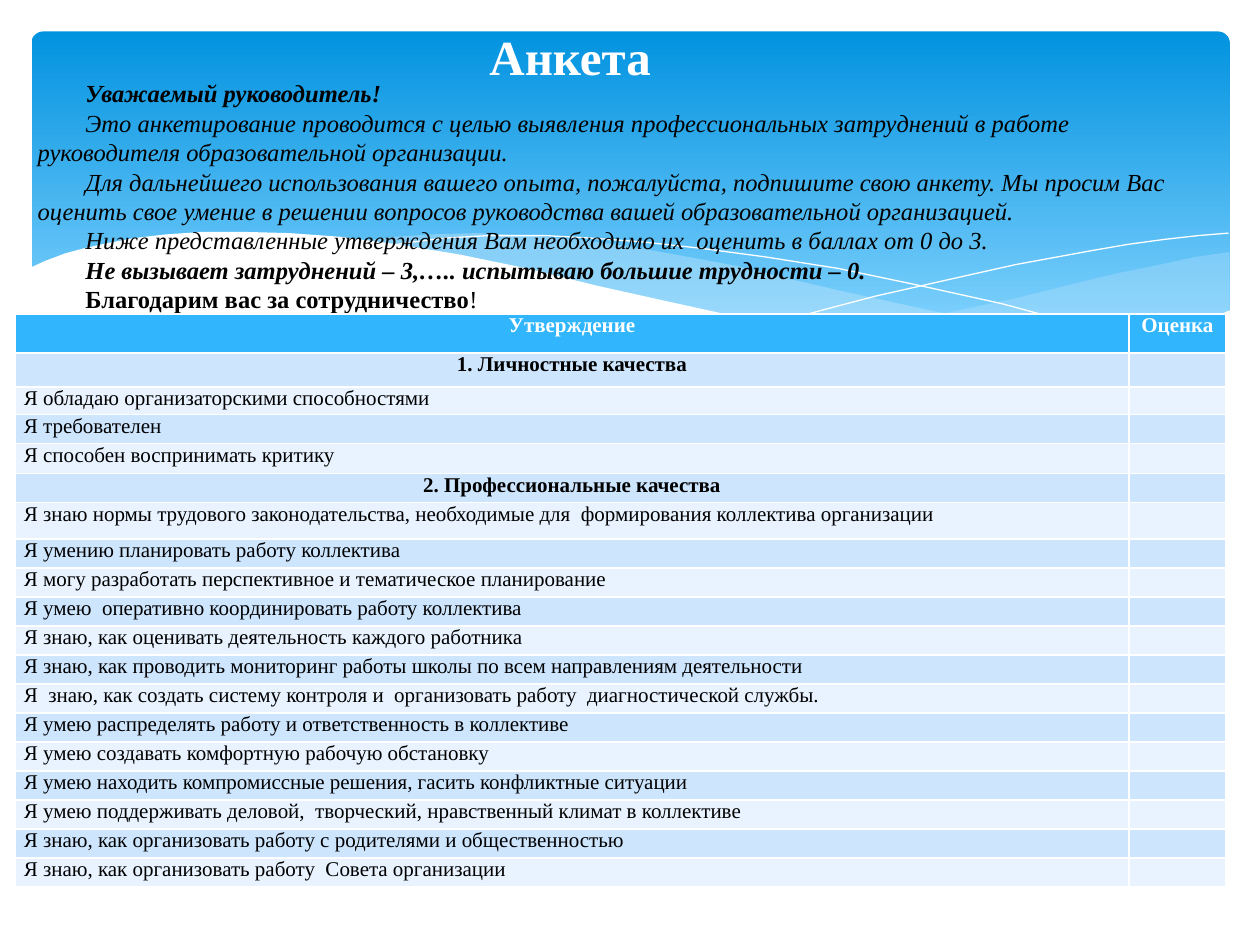
from dataclasses import dataclass

from lxml import etree
from pptx import Presentation
from pptx import util as u
from pptx.dml.color import RGBColor
from pptx.enum import shapes, text
from pptx.oxml.ns import qn

FONT = "Times New Roman"
WHITE, BLACK = "FFFFFF", "000000"
HEADER_BLUE, BAND_DARK, BAND_LIGHT = "31B6FD", "CEE5FE", "E8F3FF"
MIST = "C6E7FC"


@dataclass
class Wave:
    points: list[tuple[float, float]]
    fill: str | None = None
    alpha: int = 100  # opacity, percent


@dataclass
class IntroLine:
    runs: list[str]
    bold: bool = False
    italic: bool = True


WAVES = [
    Wave([(9.76, 2), (9.48, 2.04), (9.21, 2.1), (8.91, 2.16), (8.61, 2.23), (8.05, 2.37),
          (7.53, 2.48), (7.06, 2.57), (6.61, 2.65), (6.91, 2.69), (7.19, 2.72), (7.45, 2.75),
          (7.81, 2.77), (8.14, 2.78), (8.54, 2.76), (8.89, 2.72), (9.21, 2.65), (9.49, 2.57),
          (9.76, 2.47)], MIST, 29),
    Wave([(8.93, 2.73), (8.66, 2.69), (8.07, 2.6), (7.41, 2.47), (6.68, 2.31), (6.29, 2.22),
          (5.84, 2.11), (5.41, 2.03), (5.02, 1.96), (4.65, 1.91), (4.2, 1.87), (3.8, 1.85),
          (3.44, 1.86), (3.13, 1.88), (2.86, 1.91), (3.23, 1.96), (3.62, 2.03), (4.04, 2.11),
          (4.49, 2.22), (4.91, 2.32), (5.3, 2.4), (5.66, 2.48), (6.01, 2.55), (6.5, 2.64),
          (6.95, 2.7), (7.36, 2.75), (7.73, 2.77), (8.07, 2.78), (8.38, 2.78), (8.67, 2.76)],
         MIST, 40),
    Wave([(3.09, 1.95), (3.28, 1.92), (3.53, 1.89), (3.87, 1.87), (4.33, 1.87), (4.69, 1.89),
          (5.1, 1.92), (5.56, 1.97), (6.08, 2.04), (6.65, 2.13), (7.27, 2.26), (7.95, 2.41),
          (8.69, 2.61), (9.07, 2.72)]),
    Wave([(6.13, 2.57), (6.53, 2.46), (6.95, 2.35), (7.48, 2.23), (8.06, 2.1), (8.66, 1.99),
          (8.95, 1.94), (9.24, 1.9), (9.51, 1.87), (9.75, 1.85)]),
    Wave([(9.77, 2.46), (9.59, 2.53), (9.4, 2.59), (9.2, 2.65), (8.99, 2.69), (8.75, 2.73),
          (8.5, 2.75), (8.09, 2.77), (7.78, 2.76), (7.44, 2.74), (7.08, 2.7), (6.68, 2.65),
          (6.26, 2.58), (5.79, 2.5), (5.29, 2.39), (4.75, 2.27), (4.18, 2.13), (3.65, 2.02),
          (3.16, 1.94), (2.71, 1.88), (2.3, 1.85), (1.93, 1.84), (1.61, 1.84), (1.32, 1.86),
          (1.06, 1.89), (0.85, 1.93), (0.67, 1.97), (0.52, 2.01), (0.36, 2.07), (0.23, 2.13),
          (0.23, 3.29), (9.77, 3.29)], WHITE),
]

INTRO = [
    IntroLine(["Уважаемый руководитель!"], bold=True),
    IntroLine(["Это анкетирование проводится с целью выявления профессиональных затруднений "
               "в работе руководителя образовательной организации."]),
    IntroLine(["Для дальнейшего использования вашего опыта, пожалуйста, подпишите свою анкету. "
               "Мы просим Вас оценить свое умение в решении вопросов руководства вашей "
               "образовательной организацией."]),
    IntroLine(["Ниже представленные утверждения Вам необходимо их  оценить в баллах от 0 до 3."]),
    IntroLine(["Не вызывает затруднений – 3,….. испытываю большие трудности – 0."], bold=True),
    IntroLine(["Благодарим вас за сотрудничество", "!"], bold=True, italic=False),
]

HEADER = ("Утверждение", "Оценка")
SECTIONS = {
    "1. Личностные качества": [
        "Я обладаю организаторскими способностями",
        "Я требователен",
        "Я способен воспринимать критику",
    ],
    "2. Профессиональные качества": [
        "Я знаю нормы трудового законодательства, необходимые для  формирования коллектива организации",
        "Я умению планировать работу коллектива",
        "Я могу разработать перспективное и тематическое планирование",
        "Я умею  оперативно координировать работу коллектива",
        "Я знаю, как оценивать деятельность каждого работника",
        "Я знаю, как проводить мониторинг работы школы по всем направлениям деятельности",
        "Я  знаю, как создать систему контроля и  организовать работу  диагностической службы.",
        "Я умею распределять работу и ответственность в коллективе",
        "Я умею создавать комфортную рабочую обстановку",
        "Я умею находить компромиссные решения, гасить конфликтные ситуации",
        "Я умею поддерживать деловой,  творческий, нравственный климат в коллективе",
        "Я знаю, как организовать работу с родителями и общественностью",
        "Я знаю, как организовать работу  Совета организации",
    ],
}
COLUMN_WIDTHS = (8.84, 0.77)
ROW_HEIGHT = 0.23
SPECIAL_HEIGHTS = {0: 0.31, 1: 0.27, 2: 0.22, 4: 0.24, 6: 0.29}


def rgb(value: str) -> RGBColor:
    return RGBColor.from_string(value)


def set_font(font, size: float, color: str, bold: bool = False, italic: bool = False) -> None:
    font.name, font.size = FONT, u.Pt(size)
    font.bold, font.italic = bold, italic
    font.color.rgb = rgb(color)


def draw_banner(slide) -> None:
    banner = slide.shapes.add_shape(shapes.MSO_SHAPE.ROUNDED_RECTANGLE, u.Inches(0.25),
                                    u.Inches(0.25), u.Inches(9.51), u.Inches(2.7))
    banner.adjustments[0] = 0.034
    banner.shadow.inherit = False
    banner.line.fill.background()
    banner.fill.gradient()
    banner.fill.gradient_angle = 270
    for stop, (position, color) in zip(banner.fill.gradient_stops, [(0, "0293E0"), (0.9, "83D3FE")]):
        stop.position = position
        stop.color.rgb = rgb(color)


def draw_wave(slide, wave: Wave) -> None:
    start, *rest = [(u.Inches(x), u.Inches(y)) for x, y in wave.points]
    builder = slide.shapes.build_freeform(*start)
    builder.add_line_segments(rest, close=wave.fill is not None)
    curve = builder.convert_to_shape()
    curve.shadow.inherit = False
    if wave.fill is None:
        curve.fill.background()
        curve.line.color.rgb = rgb(WHITE)
        curve.line.width = u.Pt(0)
        return
    curve.line.fill.background()
    curve.fill.solid()
    curve.fill.fore_color.rgb = rgb(wave.fill)
    if wave.alpha < 100:
        color = curve._element.spPr.find(qn("a:solidFill"))[0]
        etree.SubElement(color, qn("a:alpha"), val=str(wave.alpha * 1000))


def draw_title(slide) -> None:
    title = slide.shapes.title
    title.left, title.top = u.Inches(2.48), u.Inches(0.13)
    title.width, title.height = u.Inches(4.09), u.Inches(0.63)
    title.text_frame.text = "Анкета"
    title.text_frame.vertical_anchor = text.MSO_ANCHOR.MIDDLE
    heading = title.text_frame.paragraphs[0]
    heading.alignment = text.PP_ALIGN.CENTER
    set_font(heading.font, 28, WHITE, bold=True)
    # Bring the title in front of the banner and waves
    slide.shapes._spTree.append(title._element)


def draw_intro(slide) -> None:
    intro = slide.shapes.add_textbox(u.Inches(0.2), u.Inches(0.56), u.Inches(9.53), u.Inches(1.99))
    frame = intro.text_frame
    frame.word_wrap = True
    frame.auto_size = text.MSO_AUTO_SIZE.SHAPE_TO_FIT_TEXT
    frame.vertical_anchor = text.MSO_ANCHOR.MIDDLE
    for index, line in enumerate(INTRO):
        paragraph = frame.add_paragraph() if index else frame.paragraphs[0]
        set_font(paragraph.font, 14, BLACK, line.bold, line.italic)
        paragraph._p.get_or_add_pPr().set("indent", str(u.Inches(0.38)))
        for wording in line.runs:
            paragraph.add_run().text = wording
        for ending in paragraph.runs[1:]:
            ending.font.bold = False


def fill_cell(cell, wording: str, background: str, color: str, heading: bool) -> None:
    cell.fill.solid()
    cell.fill.fore_color.rgb = rgb(background)
    cell.margin_left = cell.margin_right = u.Inches(0.07)
    cell.margin_top = cell.margin_bottom = 0
    paragraph = cell.text_frame.paragraphs[0]
    if not wording:
        # An empty cell takes its line height from the paragraph end
        etree.SubElement(paragraph._p, qn("a:endParaRPr"), sz="1200")
        return
    paragraph.add_run().text = wording
    paragraph.alignment = text.PP_ALIGN.CENTER if heading else text.PP_ALIGN.LEFT
    set_font(paragraph.font, 12, color, bold=heading)


def draw_questionnaire(slide) -> None:
    rows = [(HEADER, True)]
    for section, statements in SECTIONS.items():
        rows.append(((section, ""), True))
        rows += [((statement, ""), False) for statement in statements]
    heights = [SPECIAL_HEIGHTS.get(index, ROW_HEIGHT) for index in range(len(rows))]
    table = slide.shapes.add_table(len(rows), len(HEADER), u.Inches(0.12), u.Inches(2.49),
                                   u.Inches(sum(COLUMN_WIDTHS)), u.Inches(sum(heights))).table
    for column, width in zip(table.columns, COLUMN_WIDTHS):
        column.width = u.Inches(width)
    for index, (wordings, heading) in enumerate(rows):
        table.rows[index].height = u.Inches(heights[index])
        band = BAND_DARK if index % 2 else BAND_LIGHT
        background, color = (band, BLACK) if index else (HEADER_BLUE, WHITE)
        for cell, wording in zip(table.rows[index].cells, wordings):
            fill_cell(cell, wording, background, color, heading)


def main() -> None:
    deck = Presentation()
    deck.slide_width, deck.slide_height = u.Inches(10), u.Inches(7.5)
    slide = deck.slides.add_slide(deck.slide_layouts[5])
    # Backdrop
    draw_banner(slide)
    for wave in WAVES:
        draw_wave(slide, wave)
    # Content
    draw_title(slide)
    draw_intro(slide)
    draw_questionnaire(slide)
    deck.save("out.pptx")


if __name__ == "__main__":
    main()
